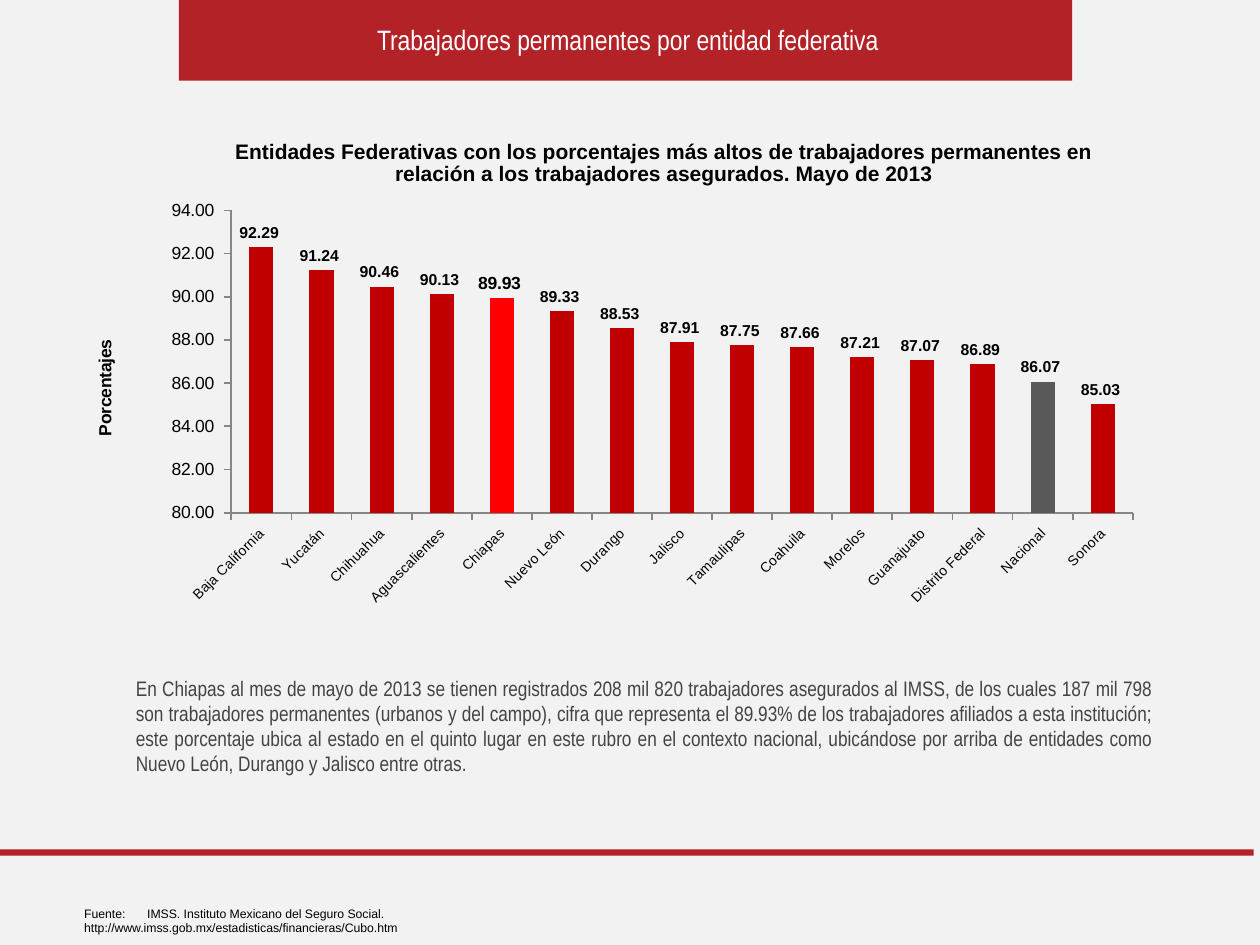
from dataclasses import dataclass

from lxml import etree
from pptx import Presentation
from pptx.chart.data import CategoryChartData
from pptx.dml.color import RGBColor
from pptx.enum.chart import XL_CHART_TYPE, XL_LABEL_POSITION, XL_TICK_MARK
from pptx.enum.shapes import MSO_SHAPE
from pptx.enum.text import MSO_ANCHOR, MSO_AUTO_SIZE, PP_ALIGN
from pptx.oxml.ns import qn
from pptx.util import Inches, Pt

COLUMN = XL_CHART_TYPE.COLUMN_CLUSTERED
OUTSIDE_END = XL_LABEL_POSITION.OUTSIDE_END
TICK_OUT = XL_TICK_MARK.OUTSIDE
RECT = MSO_SHAPE.RECTANGLE
TOP, MIDDLE = MSO_ANCHOR.TOP, MSO_ANCHOR.MIDDLE
NO_AUTOFIT = MSO_AUTO_SIZE.NONE
LEFT, CENTER, JUSTIFY = PP_ALIGN.LEFT, PP_ALIGN.CENTER, PP_ALIGN.JUSTIFY

NUMBER_FORMAT = "#,##0.00_ ;\\-#,##0.00\\ "
CHART_TITLE = (
    "Entidades Federativas con los porcentajes más altos de trabajadores "
    "permanentes en relación a los trabajadores asegurados. Mayo de 2013"
)
SUMMARY = (
    "En Chiapas al mes de mayo de 2013 se tienen registrados 208 mil 820 "
    "trabajadores asegurados al IMSS, de los cuales 187 mil 798 son trabajadores "
    "permanentes (urbanos y del campo), cifra que representa el 89.93% de los "
    "trabajadores afiliados a esta institución; este porcentaje ubica al estado en "
    "el quinto lugar en este rubro en el contexto nacional, ubicándose por arriba "
    "de entidades como Nuevo León, Durango y Jalisco entre otras."
)
SOURCE = (
    "Fuente:\tIMSS. Instituto Mexicano del Seguro Social.\v"
    "http://www.imss.gob.mx/estadisticas/financieras/Cubo.htm"
)
SHARES = {
    "Baja California": 92.29,
    "Yucatán": 91.24,
    "Chihuahua": 90.46,
    "Aguascalientes": 90.13,
    "Chiapas": 89.93,
    "Nuevo León": 89.33,
    "Durango": 88.53,
    "Jalisco": 87.91,
    "Tamaulipas": 87.75,
    "Coahuila": 87.66,
    "Morelos": 87.21,
    "Guanajuato": 87.07,
    "Distrito Federal": 86.89,
    "Nacional": 86.07,
    "Sonora": 85.03,
}


@dataclass(frozen=True)
class Theme:
    background: str = "F2F2F2"
    band: str = "B22227"
    white: str = "FFFFFF"
    black: str = "000000"
    body: str = "434343"
    axis: str = "868686"
    column: str = "C00000"
    chiapas: str = "FF0000"
    national: str = "595959"
    sans: str = "Arial"
    narrow: str = "Arial Narrow"
    title_size: int = 16
    chart_title_size: int = 12
    body_size: int = 12
    chart_size: int = 10
    label_size: int = 9
    category_size: int = 8
    source_size: int = 7


def paint(fill, color):
    fill.solid()
    fill.fore_color.rgb = RGBColor.from_string(color)


def set_font(font, name, size, color, bold=False):
    font.name, font.size, font.bold = name, Pt(size), bold
    font.color.rgb = RGBColor.from_string(color)


def set_layout(element, **values):
    for old in element.findall(qn("c:layout")):
        element.remove(old)
    layout = etree.Element(qn("c:layout"))
    manual = etree.SubElement(layout, qn("c:manualLayout"))
    for key, value in values.items():
        etree.SubElement(manual, qn(f"c:{key}")).set("val", str(value))
    tx = element.find(qn("c:tx"))
    element.insert(0 if tx is None else 1, layout)


class SlideBuilder:
    """Draws styled elements on the current slide."""

    def __init__(self, prs, theme):
        self.theme = theme
        self.slide = prs.slides.add_slide(prs.slide_layouts[5])
        paint(self.slide.background.fill, theme.background)

    def band(self, *box):
        sp = self.slide.shapes.add_shape(RECT, *map(Inches, box))
        sp.shadow.inherit = False
        paint(sp.fill, self.theme.band)
        sp.line.fill.background()

    def set_text(self, sp, text, name, size, color, align, anchor=TOP, wrap=True):
        tf = sp.text_frame
        tf.text = text
        tf.word_wrap, tf.vertical_anchor, tf.auto_size = wrap, anchor, NO_AUTOFIT
        p = tf.paragraphs[0]
        p.alignment = align
        set_font(p.font, name, size, color)

    def title(self, text, *box):
        sp = self.slide.shapes.title
        sp.left, sp.top, sp.width, sp.height = map(Inches, box)
        self.slide.shapes._spTree.append(sp._element)
        t = self.theme
        self.set_text(sp, text, t.narrow, t.title_size, t.white, CENTER)

    def summary(self, text, *box):
        sp = self.slide.shapes.add_textbox(*map(Inches, box))
        t = self.theme
        self.set_text(sp, text, t.narrow, t.body_size, t.body, JUSTIFY, MIDDLE)

    def source(self, text, *box):
        sp = self.slide.shapes.add_textbox(*map(Inches, box))
        t = self.theme
        self.set_text(sp, text, t.sans, t.source_size, t.black, LEFT, wrap=False)

    def chart_heading(self, title, text, size, **position):
        title.text_frame.text = text
        p = title.text_frame.paragraphs[0]
        set_font(p.font, self.theme.sans, size, self.theme.black, True)
        set_layout(title._element, xMode="edge", yMode="edge", **position)

    def axis(self, axis, size):
        axis.has_major_gridlines = False
        axis.major_tick_mark = TICK_OUT
        axis.format.line.width = Pt(1)
        axis.format.line.color.rgb = RGBColor.from_string(self.theme.axis)
        set_font(axis.tick_labels.font, self.theme.sans, size, self.theme.black)

    def column_chart(self, shares, title, value_title, highlights, *box):
        t = self.theme
        data = CategoryChartData(number_format="0.00")
        data.categories = list(shares)
        data.add_series("Series 1", list(shares.values()))
        frame = self.slide.shapes.add_chart(COLUMN, *map(Inches, box), data)
        chart = frame.chart
        chart.has_legend = False
        set_font(chart.font, t.sans, t.chart_size, t.black)
        self.chart_heading(chart.chart_title, title, t.chart_title_size, x=0.14, y=0.03)
        set_layout(
            chart._chartSpace.chart.plotArea, layoutTarget="inner", xMode="edge",
            yMode="edge", x=0.14, y=0.18, w=0.83, h=0.6,
        )

        categories, values = chart.category_axis, chart.value_axis
        self.axis(categories, t.category_size)
        categories._element.find(qn("c:txPr")).find(qn("a:bodyPr")).set("rot", "-2700000")
        self.axis(values, t.chart_size)
        values.minimum_scale, values.maximum_scale, values.major_unit = 80, 94, 2
        values.tick_labels.number_format = NUMBER_FORMAT
        values.tick_labels.number_format_is_linked = False
        self.chart_heading(values.axis_title, value_title, t.chart_size, x=0.01, y=0.43)
        body = values.axis_title.text_frame._txBody.find(qn("a:bodyPr"))
        body.set("rot", "-5400000")
        body.set("vert", "horz")

        plot = chart.plots[0]
        plot.gap_width, plot.vary_by_categories = 150, False
        series = plot.series[0]
        paint(series.format.fill, t.column)
        labels = series.data_labels
        labels.show_value, labels.position = True, OUTSIDE_END
        labels.number_format, labels.number_format_is_linked = NUMBER_FORMAT, False
        set_font(labels.font, t.sans, t.label_size, t.black, True)
        for name, color in highlights.items():
            paint(series.points[list(shares).index(name)].format.fill, color)
        label = series.points[list(shares).index("Chiapas")].data_label
        set_font(label.font, t.sans, t.chart_size, t.black, True)
        label.position = OUTSIDE_END


def main():
    prs = Presentation()
    prs.slide_width, prs.slide_height = Inches(10), Inches(7.5)
    theme = Theme()
    s = SlideBuilder(prs, theme)
    s.band(1.42, 0, 7.09, 0.64)
    s.band(0, 6.74, 9.95, 0.05)
    s.summary(SUMMARY, 0.98, 5.13, 8.27, 1.26)
    s.title("Trabajadores permanentes por entidad federativa", 1.46, 0.13, 7.05, 0.37)
    s.source(SOURCE, 0.57, 7.14, 5.08, 0.22)
    highlights = {"Chiapas": theme.chiapas, "Nacional": theme.national}
    s.column_chart(SHARES, CHART_TITLE, "Porcentajes", highlights, 0.63, 0.95, 8.62, 4)
    prs.save("out.pptx")


if __name__ == "__main__":
    main()
